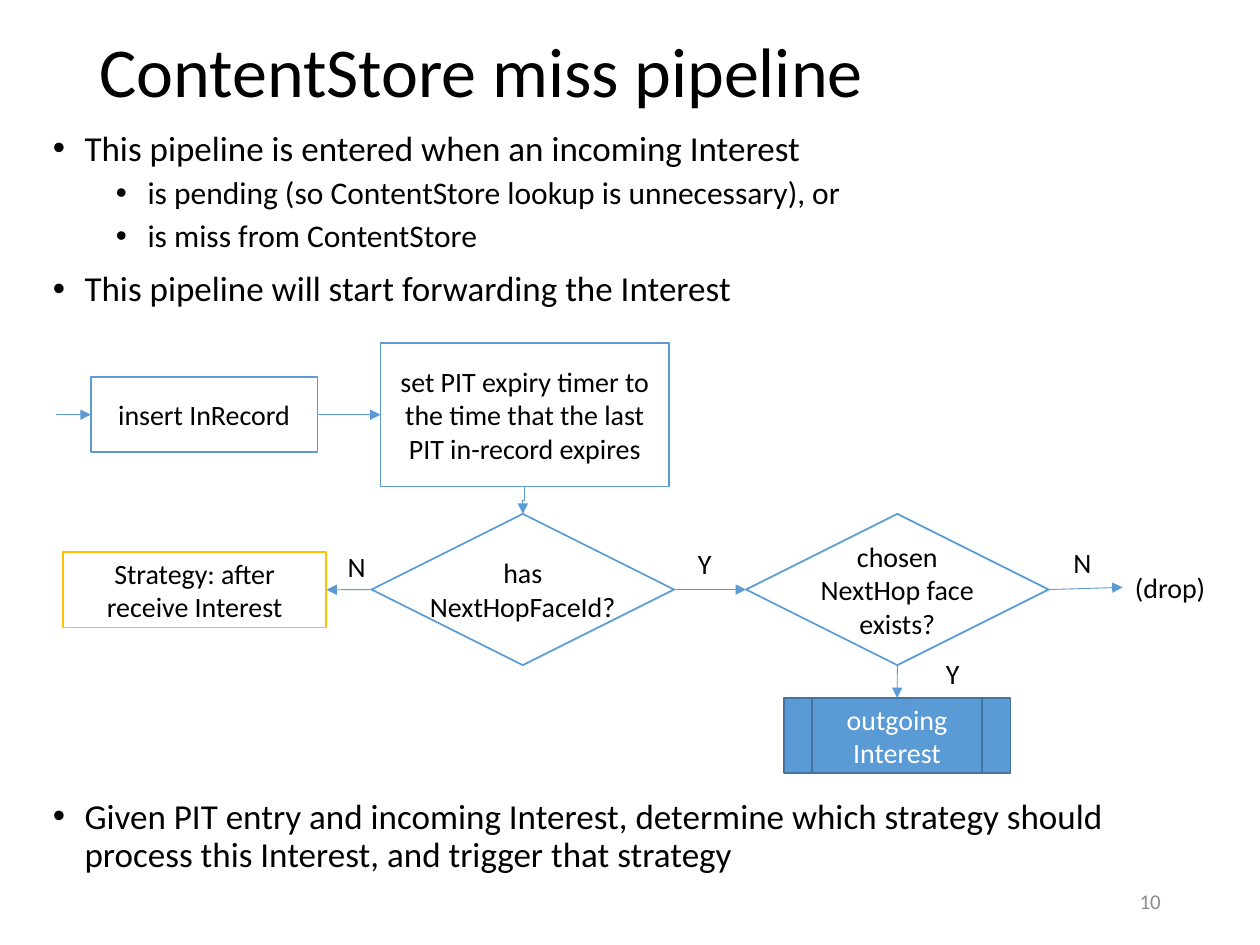
from lxml.etree import SubElement
from pptx import Presentation
from pptx.dml.color import RGBColor
from pptx.enum.shapes import MSO_CONNECTOR, MSO_SHAPE
from pptx.enum.text import MSO_ANCHOR, MSO_AUTO_SIZE, PP_ALIGN
from pptx.oxml.ns import qn
from pptx.util import Cm, Pt

COLORS = {
    "text": "000000", "paper": "FFFFFF", "blue": "5B9BD5",
    "blue_edge": "43739E", "strategy": "FFC000", "number": "8C8C8C",
}
FONT = "Calibri"
TOP, LEFT, BOTTOM, RIGHT = range(4)


def color(name):
    return RGBColor.from_string(COLORS[name])


def place(part, x, y, w, h):
    part.left, part.top, part.width, part.height = Cm(x), Cm(y), Cm(w), Cm(h)


def write(paragraph, text, size=16, ink="text", align=PP_ALIGN.LEFT):
    paragraph.text = text
    paragraph.alignment = align
    for run in paragraph.runs:
        run.font.name = FONT
        run.font.size = Pt(size)
        run.font.color.rgb = color(ink)
    # Line breaks take the size of the text around them
    for line_break in paragraph._p.findall(qn("a:br")):
        SubElement(line_break, qn("a:rPr")).set("sz", str(size * 100))


def add_title(slide, box, text):
    title = slide.shapes.title
    place(title, *box)
    title.text_frame.vertical_anchor = MSO_ANCHOR.MIDDLE
    title.text_frame.auto_size = MSO_AUTO_SIZE.NONE
    paragraph = title.text_frame.paragraphs[0]
    write(paragraph, text, size=40)
    paragraph.line_spacing = 0.9


def add_bullets(body, box, items):
    place(body, *box)
    frame = body.text_frame
    frame.auto_size = MSO_AUTO_SIZE.NONE
    for i, (level, text) in enumerate(items):
        paragraph = frame.add_paragraph() if i else frame.paragraphs[0]
        write(paragraph, text, size=18 if level else 20)
        paragraph.level = level
        paragraph.line_spacing = 0.9
        paragraph.space_before = Pt(5 if level else 10)
        properties = paragraph._p.get_or_add_pPr()
        properties.set("marL", str(Cm(0.64 + 1.27 * level)))
        properties.set("indent", str(Cm(-0.64)))
        SubElement(properties, qn("a:buFont")).set("typeface", "Arial")
        SubElement(properties, qn("a:buChar")).set("char", "•")


def add_step(slide, kind, box, text, fill="paper", edge="blue", ink="text"):
    step = slide.shapes.add_shape(kind, *map(Cm, box))
    step.shadow.inherit = False
    step.fill.solid()
    step.fill.fore_color.rgb = color(fill)
    step.line.color.rgb = color(edge)
    step.line.width = Pt(1)
    frame = step.text_frame
    frame.word_wrap = kind != MSO_SHAPE.FLOWCHART_DECISION
    frame.vertical_anchor = MSO_ANCHOR.MIDDLE
    write(frame.paragraphs[0], text, ink=ink, align=PP_ALIGN.CENTER)
    return step


def add_label(slide, box, text):
    label = slide.shapes.add_textbox(*map(Cm, box))
    label.text_frame.word_wrap = False
    label.text_frame.auto_size = MSO_AUTO_SIZE.SHAPE_TO_FIT_TEXT
    write(label.text_frame.paragraphs[0], text)


def add_arrow(slide, start, end, kind=MSO_CONNECTOR.STRAIGHT):
    """Each end is either a point in cm or a (step, side) pair."""
    points = [(0, 0) if hasattr(e[0], "shape_id") else tuple(map(Cm, e))
              for e in (start, end)]
    arrow = slide.shapes.add_connector(kind, *points[0], *points[1])
    for (part, side), join in ((start, arrow.begin_connect), (end, arrow.end_connect)):
        if hasattr(part, "shape_id"):
            join(part, side)
    arrow.line.color.rgb = color("blue")
    arrow.line.width = Pt(0.5)
    SubElement(arrow.line._get_or_add_ln(), qn("a:tailEnd")).set("type", "triangle")
    SubElement(arrow._element.spPr, qn("a:effectLst"))
    return arrow


def turn_downward(arrow):
    """Let an elbow leave downward: a quarter turn about its centre."""
    shift, drop = arrow.width, arrow.height
    arrow.left, arrow.top = (arrow.left + (shift - drop) // 2,
                             arrow.top + (drop - shift) // 2)
    arrow.width, arrow.height = drop, shift
    frame = arrow._element.spPr.find(qn("a:xfrm"))
    frame.attrib.pop("flipH", None)
    frame.set("rot", "5400000")


def add_flow(slide, x, y):
    rect, decision = MSO_SHAPE.RECTANGLE, MSO_SHAPE.FLOWCHART_DECISION

    def step(kind, dx, dy, w, h, text, **style):
        return add_step(slide, kind, (x + dx, y + dy, w, h), text, **style)

    # Steps
    insert = step(rect, 0.71, 0.69, 4.57, 1.52, "insert InRecord")
    timer = step(rect, 6.55, 0, 5.82, 2.9,
                 "set PIT expiry timer to the time that the last PIT in-record expires")
    strategy = step(rect, 0.15, 4.22, 5.31, 1.52,
                    "Strategy: after receive Interest", edge="strategy")
    has_face = step(decision, 6.37, 3.45, 6.1, 3.05, "has\vNextHopFaceId?")
    face_exists = step(decision, 13.92, 3.45, 6.1, 3.05,
                       "chosen\vNextHop face\vexists?")
    outgoing = step(MSO_SHAPE.FLOWCHART_PREDEFINED_PROCESS, 14.68, 7.16, 4.57, 1.52,
                    "outgoing Interest", fill="blue", edge="blue_edge", ink="paper")

    # Arrows
    for start, end in (
        ((x, y + 1.45), (insert, LEFT)),
        ((insert, RIGHT), (timer, LEFT)),
        ((has_face, LEFT), (strategy, RIGHT)),
        ((has_face, RIGHT), (face_exists, LEFT)),
        ((face_exists, BOTTOM), (outgoing, TOP)),
        ((face_exists, RIGHT), (x + 21.51, y + 4.93)),
    ):
        add_arrow(slide, start, end)
    turn_downward(add_arrow(slide, (timer, BOTTOM), (has_face, TOP),
                            MSO_CONNECTOR.ELBOW))

    # Branch labels
    for text, dx, dy, w in (
        ("(drop)", 21.51, 4.47, 1.96),
        ("N", 20.27, 3.96, 0.89),
        ("Y", 17.7, 6.2, 0.79),
        ("Y", 12.7, 3.99, 0.79),
        ("N", 5.64, 4.04, 0.89),
    ):
        add_label(slide, (x + dx, y + dy, w, 0.94), text)


def add_page_number(slide, box, number):
    frame = slide.shapes.add_textbox(*map(Cm, box)).text_frame
    frame.word_wrap = True
    frame.vertical_anchor = MSO_ANCHOR.MIDDLE
    write(frame.paragraphs[0], number, size=12, ink="number", align=PP_ALIGN.RIGHT)


def main():
    deck = Presentation()
    deck.slide_width, deck.slide_height = Cm(25.4), Cm(19.05)
    two_content = deck.slide_layouts[3]
    slide = deck.slides.add_slide(two_content)
    intro, summary = list(slide.placeholders)[1:3]

    add_title(slide, (1.75, 0.05, 21.9, 2.9), "ContentStore miss pipeline")
    add_bullets(intro, (0.81, 2.51, 23.19, 4.65), (
        (0, "This pipeline is entered when an incoming Interest"),
        (1, "is pending (so ContentStore lookup is unnecessary), or"),
        (1, "is miss from ContentStore"),
        (0, "This pipeline will start forwarding the Interest"),
    ))
    add_flow(slide, 1.12, 6.91)
    add_bullets(summary, (0.81, 15.98, 23.37, 2.59), (
        (0, "Given PIT entry and incoming Interest, determine which strategy "
            "should process this Interest, and trigger that strategy"),
    ))
    add_page_number(slide, (17.93, 17.65, 5.72, 1.02), "10")
    deck.save("out.pptx")


if __name__ == "__main__":
    main()
